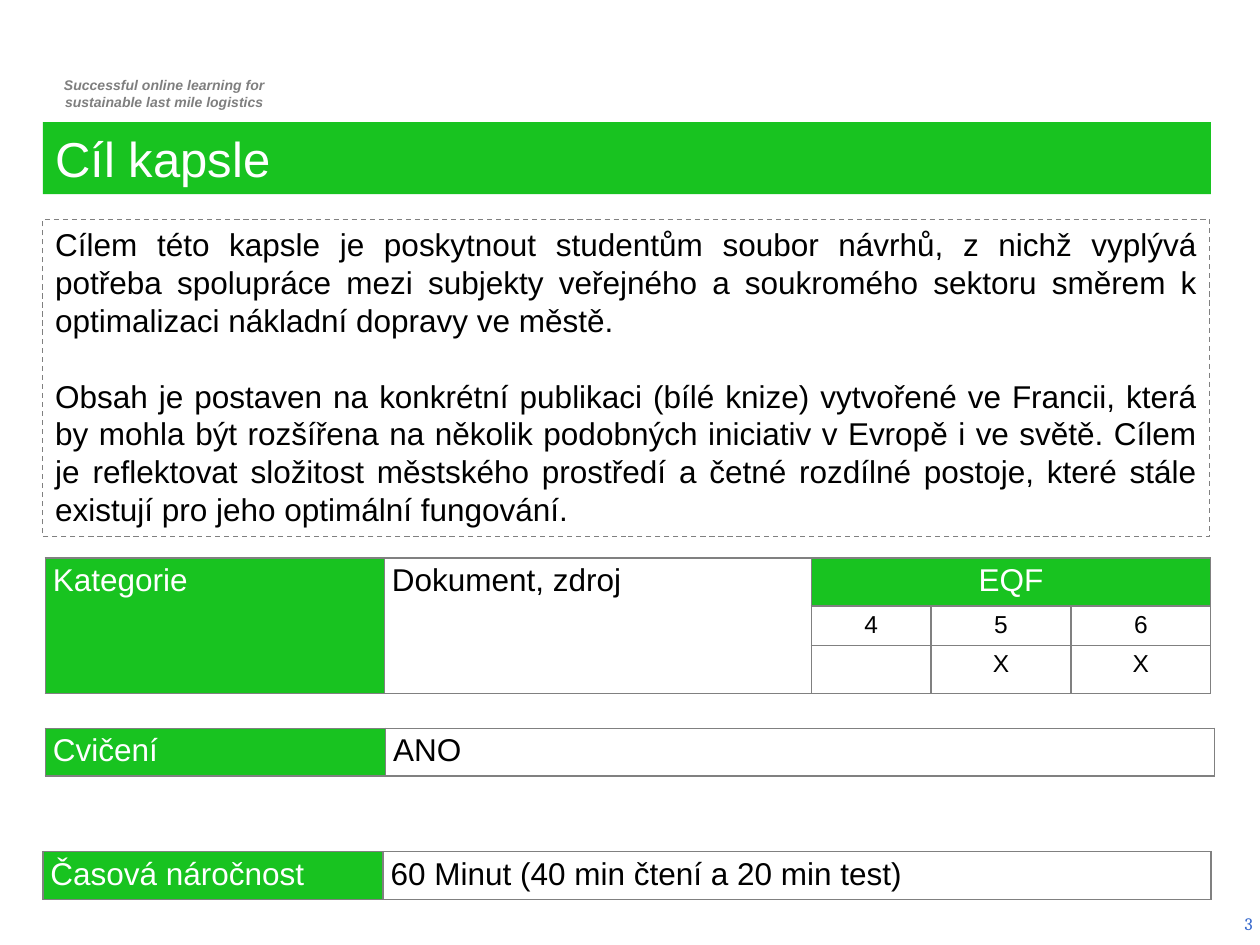
import pptx
import pptx.dml.color
import pptx.enum.dml
import pptx.enum.text
import pptx.oxml
import pptx.oxml.ns
import pptx.util
from pptx.util import Inches

COLORS = {
    "green": "18C320",
    "grey": "808080",
    "tagline": "7F7F7F",
    "number": "3366CC",
    "white": "FFFFFF",
    "black": "000000",
}
ALIGN = pptx.enum.text.PP_ALIGN
ANCHOR = pptx.enum.text.MSO_ANCHOR

GOAL = [
    "Cílem této kapsle je poskytnout studentům soubor návrhů, z nichž vyplývá potřeba "
    "spolupráce mezi subjekty veřejného a soukromého sektoru směrem k optimalizaci "
    "nákladní dopravy ve městě.",
    "Obsah je postaven na konkrétní publikaci (bílé knize) vytvořené ve Francii, která by "
    "mohla být rozšířena na několik podobných iniciativ v Evropě i ve světě. Cílem je "
    "reflektovat složitost městského prostředí a četné rozdílné postoje, které stále "
    "existují pro jeho optimální fungování.",
]


def rgb(name):
    return pptx.dml.color.RGBColor.from_string(COLORS[name])


def write(frame, lines, size, color="black", align=ALIGN.LEFT, font="Arial", bold=None, gap=0):
    """Write one paragraph per line, with gap points between paragraphs."""
    frame.word_wrap = True
    for index, line in enumerate(lines):
        para = frame.add_paragraph() if index else frame.paragraphs[0]
        para.alignment = align
        if index and gap:
            para.space_before = pptx.util.Pt(gap)
        span = para.add_run()
        span.text = line
        span.font.name = font
        span.font.size = pptx.util.Pt(size)
        span.font.bold = span.font.italic = bold
        span.font.color.rgb = rgb(color)


def add_text_box(page, left, top, width, height):
    box = page.shapes.add_textbox(Inches(left), Inches(top), Inches(width), Inches(height))
    return box.text_frame


def set_title(page, text):
    title = page.shapes.title
    title.left, title.top = Inches(0.34), Inches(0.97)
    title.width, title.height = Inches(9.27), Inches(0.57)
    title.fill.solid()
    title.fill.fore_color.rgb = rgb("green")
    title.text_frame.auto_size = pptx.enum.text.MSO_AUTO_SIZE.NONE
    title.text_frame.vertical_anchor = ANCHOR.MIDDLE
    write(title.text_frame, [text], 28, "white")


def add_goal_box(page):
    box = page.shapes.add_textbox(Inches(0.34), Inches(1.74), Inches(9.26), Inches(2.52))
    box.line.color.rgb = rgb("grey")
    box.line.width = pptx.util.Pt(0.75)
    box.line.dash_style = pptx.enum.dml.MSO_LINE.DASH
    write(box.text_frame, GOAL, 18, align=ALIGN.JUSTIFY, gap=21.6)


def set_borders(cell):
    properties = cell._tc.get_or_add_tcPr()
    for position, side in enumerate(("lnL", "lnR", "lnT", "lnB")):
        properties.insert(position, pptx.oxml.parse_xml(
            f'<a:{side} {pptx.oxml.ns.nsdecls("a")} w="12700"><a:solidFill>'
            f'<a:srgbClr val="{COLORS["grey"]}"/></a:solidFill></a:{side}>'))


def add_grid(page, left, top, columns, rows):
    """Add a bordered table without fills and return it."""
    frame = page.shapes.add_table(len(rows), len(columns), Inches(left), Inches(top),
                                  Inches(sum(columns)), Inches(sum(rows)))
    table = frame.table
    table.first_row = table.horz_banding = False
    for column, width in zip(table.columns, columns):
        column.width = Inches(width)
    for row, height in zip(table.rows, rows):
        row.height = Inches(height)
    for cell in table.iter_cells():
        cell.margin_left = cell.margin_right = Inches(0.06)
        cell.margin_top = cell.margin_bottom = Inches(0.04)
        cell.fill.background()
        set_borders(cell)
    return table


def fill_label(cell, text, align=ALIGN.JUSTIFY):
    cell.fill.solid()
    cell.fill.fore_color.rgb = rgb("green")
    write(cell.text_frame, [text], 18, "white", align)


def add_category_table(page):
    table = add_grid(page, 0.36, 4.43, [2.69, 3.39, 0.95, 1.11, 1.11], [0.37, 0.31, 0.37])
    for column in (0, 1):
        table.cell(0, column).merge(table.cell(2, column))
    table.cell(0, 2).merge(table.cell(0, 4))
    fill_label(table.cell(0, 0), "Kategorie")
    write(table.cell(0, 1).text_frame, ["Dokument, zdroj"], 18, align=ALIGN.JUSTIFY)
    fill_label(table.cell(0, 2), "EQF", ALIGN.CENTER)
    for row, marks in enumerate((["4", "5", "6"], ["", "X", "X"]), start=1):
        for column, mark in enumerate(marks, start=2):
            if mark:
                write(table.cell(row, column).text_frame, [mark], 14, align=ALIGN.CENTER)


def add_label_row(page, left, top, value_width, label, value):
    table = add_grid(page, left, top, [2.7, value_width], [0.37])
    fill_label(table.cell(0, 0), label)
    write(table.cell(0, 1).text_frame, [value], 18, align=ALIGN.JUSTIFY)


def main():
    deck = pptx.Presentation()
    deck.slide_width, deck.slide_height = Inches(10), Inches(7.5)
    page = deck.slides.add_slide(deck.slide_layouts[5])

    tagline = add_text_box(page, 0.29, 0.56, 2.03, 0.37)
    write(tagline, ["Successful online learning for", "sustainable last mile logistics"],
          8, "tagline", ALIGN.CENTER, bold=True)
    set_title(page, "Cíl kapsle")
    add_goal_box(page)
    add_category_table(page)
    add_label_row(page, 0.36, 5.78, 6.58, "Cvičení", "ANO")
    add_label_row(page, 0.34, 6.76, 6.57, "Časová náročnost",
                  "60 Minut (40 min čtení a 20 min test)")
    number = add_text_box(page, 7.71, 7.13, 2.33, 0.4)
    number.vertical_anchor = ANCHOR.MIDDLE
    write(number, ["3"], 10, "number", ALIGN.RIGHT, "Cambria")

    deck.save("out.pptx")


if __name__ == "__main__":
    main()
